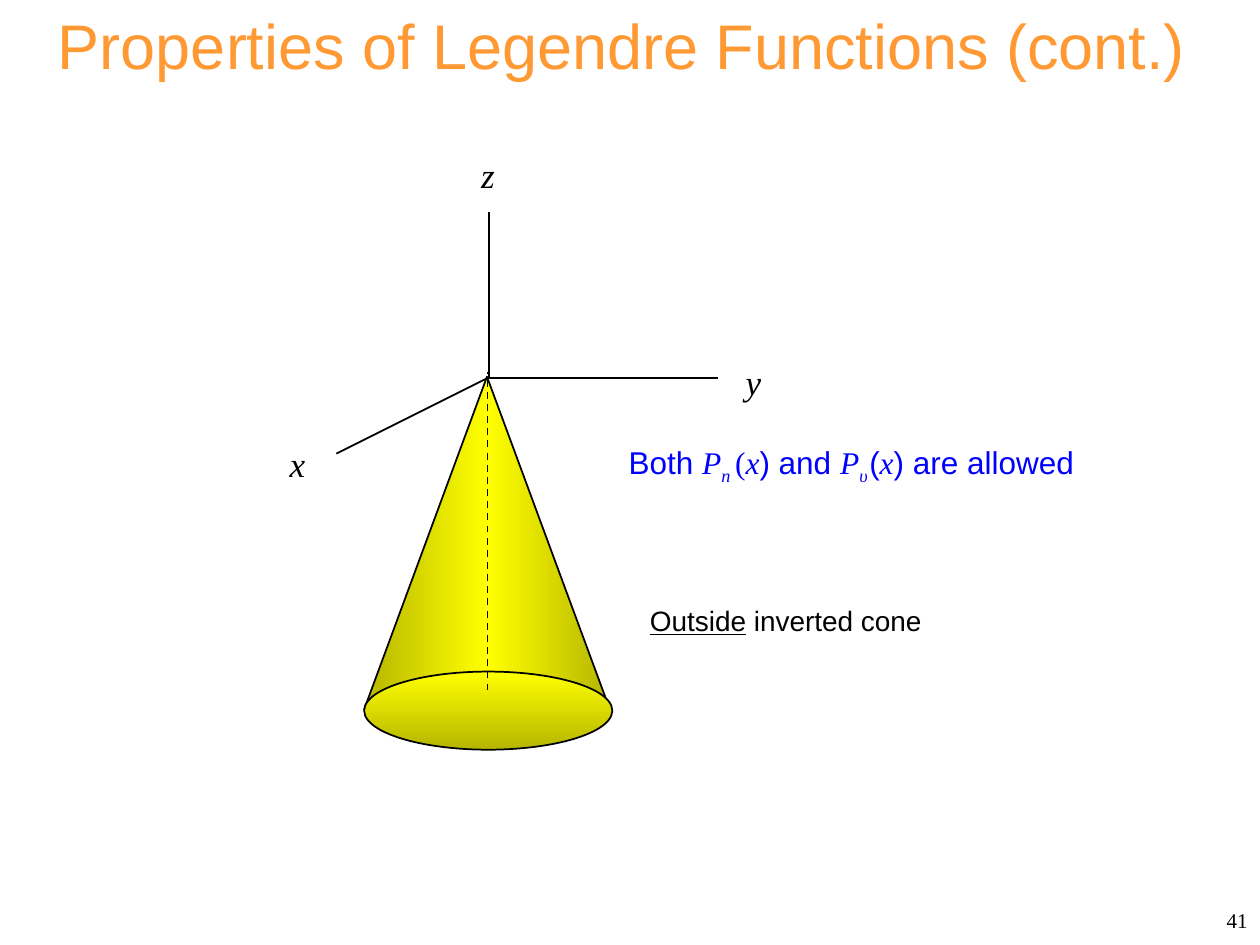
from lxml import etree
from pptx import Presentation
from pptx.dml.color import RGBColor
from pptx.enum.dml import MSO_LINE
from pptx.enum.shapes import MSO_CONNECTOR, MSO_SHAPE
from pptx.enum.text import MSO_ANCHOR, MSO_AUTO_SIZE, PP_ALIGN
from pptx.oxml.ns import qn
from pptx.util import Inches, Pt

STRAIGHT = MSO_CONNECTOR.STRAIGHT
TRIANGLE, OVAL = MSO_SHAPE.ISOSCELES_TRIANGLE, MSO_SHAPE.OVAL
DASH = MSO_LINE.DASH
TOP, MIDDLE = MSO_ANCHOR.TOP, MSO_ANCHOR.MIDDLE
LEFT, CENTER, RIGHT = PP_ALIGN.LEFT, PP_ALIGN.CENTER, PP_ALIGN.RIGHT
GROW, FIXED = MSO_AUTO_SIZE.SHAPE_TO_FIT_TEXT, MSO_AUTO_SIZE.NONE

SANS, SERIF = "Arial", "Times New Roman"
BLACK, WHITE, BLUE, ORANGE, YELLOW = "000000", "FFFFFF", "0000FF", "FF9933", "FFFF00"
DARK_SHADE = "46275"

PLAIN = {"font": SANS}
UPRIGHT = {"font": SERIF}
SYMBOL = {"font": SERIF, "italic": True}
INDEX = {**SYMBOL, "baseline": "-25000"}

TITLE = [("Properties of Legendre Functions (cont.)", PLAIN)]
PAGE_NUMBER = [("41", UPRIGHT)]
CAPTION = [("Outside", {**PLAIN, "underline": True}), (" inverted cone", PLAIN)]
STATEMENT = [
    ("Both ", PLAIN), ("P", SYMBOL), ("n ", INDEX), ("(", UPRIGHT), ("x", SYMBOL),
    (") and ", PLAIN), ("P", SYMBOL), ("υ", INDEX), (" ", {**INDEX, "size": 6}),
    ("(", PLAIN), ("x", SYMBOL), (") are allowed", PLAIN),
]
AXIS_LABELS = [
    ("y", (5.82, 2.81, 0.61, 0.43)),
    ("x", (2.2, 3.46, 0.37, 0.43)),
    ("z", (3.72, 1.17, 0.45, 0.43)),
]
AXES = [
    ((3.87, 5.48), (3.87, 2.95), DASH),
    ((3.87, 3), (5.7, 3), None),
    ((3.87, 3), (2.67, 3.6), None),
    ((3.88, 2.99), (3.88, 1.68), None),
]
CONE_PARTS = [
    (TRIANGLE, (2.89, 2.99, 1.95, 2.64), [(0, True), (50, False), (100, True)], 0, False),
    (OVAL, (2.89, 5.33, 1.97, 0.62), [(0, True), (100, False)], 270, True),
]


def color(value):
    return RGBColor.from_string(value)


def inches(values):
    return [Inches(value) for value in values]


def write(box, spans, size, ink, align=LEFT, anchor=TOP, wrap=True, fit=GROW):
    frame = box.text_frame
    frame.word_wrap = wrap
    frame.auto_size = fit
    frame.vertical_anchor = anchor
    para = frame.paragraphs[0]
    para.alignment = align
    for text, style in spans:
        span = para.add_run()
        span.text = text
        font = span.font
        font.name = style["font"]
        font.size = Pt(style.get("size", size))
        font.color.rgb = color(ink)
        font.italic = style.get("italic", False)
        font.underline = style.get("underline", False)
        if "baseline" in style:
            font._element.set("baseline", style["baseline"])


def add_text(page, area, spans, size, ink, **layout):
    box = page.shapes.add_textbox(*inches(area))
    write(box, spans, size, ink, **layout)
    return box


def outline(line):
    line.color.rgb = color(BLACK)
    line.width = Pt(1)


def add_cone_part(page, kind, area, stops, angle, flipped):
    part = page.shapes.add_shape(kind, *inches(area))
    part.shadow.inherit = False
    outline(part.line)
    part.fill.gradient()
    part.fill.gradient_angle = angle
    stop_list = part.element.spPr.find(".//" + qn("a:gsLst"))
    stop_list.clear()
    for percent, dark in stops:
        stop = etree.SubElement(stop_list, qn("a:gs"), pos=str(percent * 1000))
        tone = etree.SubElement(stop, qn("a:srgbClr"), val=YELLOW)
        if dark:
            etree.SubElement(tone, qn("a:shade"), val=DARK_SHADE)
    if flipped:
        part.element.spPr.find(qn("a:xfrm")).set("flipV", "1")


def add_axis(page, start, end, dash):
    axis = page.shapes.add_connector(STRAIGHT, *inches(start + end))
    outline(axis.line)
    if dash:
        axis.line.dash_style = dash
    etree.SubElement(axis.element.spPr, qn("a:effectLst"))


def main():
    deck = Presentation()
    deck.slide_width, deck.slide_height = inches((10, 7.5))
    page = deck.slides.add_slide(deck.slide_layouts[5])
    title = page.shapes.title
    title.left, title.top, title.width, title.height = inches((0.27, 0, 9.33, 0.7))
    write(title, TITLE, 36, ORANGE, align=CENTER)
    add_text(page, (7.67, 7.1, 2.33, 0.4), PAGE_NUMBER, 12, BLACK,
             align=RIGHT, anchor=MIDDLE, fit=FIXED)
    for part in CONE_PARTS:
        add_cone_part(page, *part)
    for axis in AXES:
        add_axis(page, *axis)
    for letter, area in AXIS_LABELS:
        add_text(page, area, [(letter, SYMBOL)], 20, BLACK)
    caption = add_text(page, (5.06, 4.74, 2.38, 0.37), CAPTION, 16, BLACK, wrap=False)
    caption.fill.solid()
    caption.fill.fore_color.rgb = color(WHITE)
    add_text(page, (4.89, 3.47, 3.82, 0.4), STATEMENT, 18, BLUE, wrap=False)
    deck.save("out.pptx")


if __name__ == "__main__":
    main()
